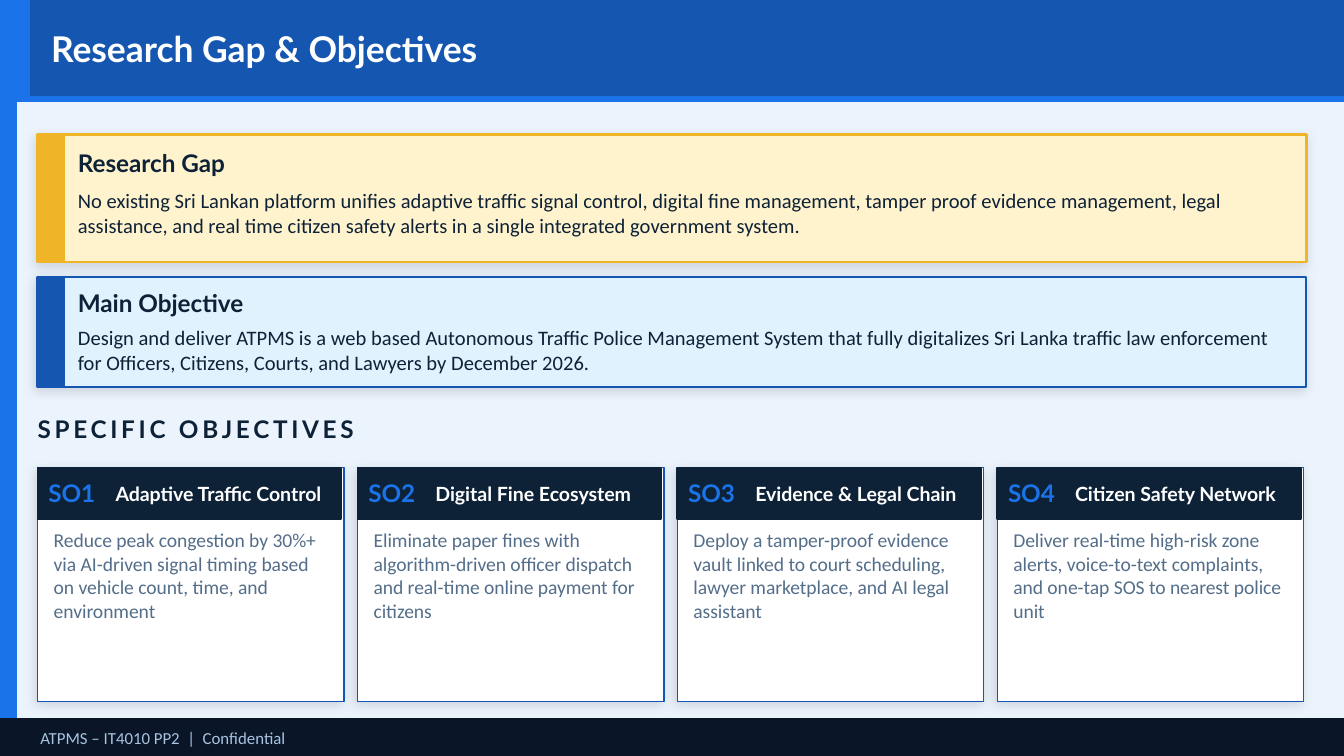
from pptx import Presentation
from pptx.dml.color import RGBColor
from pptx.enum.shapes import MSO_SHAPE
from pptx.enum.text import MSO_ANCHOR
from pptx.oxml import parse_xml
from pptx.oxml.ns import nsdecls, qn
from pptx.util import Inches, Pt

RECTANGLE = MSO_SHAPE.RECTANGLE
TOP, MIDDLE = MSO_ANCHOR.TOP, MSO_ANCHOR.MIDDLE

SKY = RGBColor(0xEB, 0xF3, 0xFD)
BRIGHT_BLUE = RGBColor(0x1A, 0x73, 0xE8)
BLUE = RGBColor(0x15, 0x57, 0xB0)
PALE_BLUE = RGBColor(0xE0, 0xF2, 0xFE)
NAVY = RGBColor(0x0D, 0x21, 0x37)
MIDNIGHT = RGBColor(0x0A, 0x16, 0x28)
AMBER = RGBColor(0xF0, 0xB4, 0x29)
CREAM = RGBColor(0xFF, 0xF3, 0xCD)
SLATE = RGBColor(0x54, 0x6E, 0x8A)
MIST = RGBColor(0xA8, 0xC4, 0xE0)
WHITE = RGBColor(0xFF, 0xFF, 0xFF)

HEADING_FONT, BODY_FONT = "Lato", "Calibri"
WIDTH = 10
HEIGHT = WIDTH * 9 / 16
MARGIN = 0.28

TITLE = "Research Gap & Objectives"
SECTION = "SPECIFIC OBJECTIVES"
FOOTER = "ATPMS – IT4010 PP2  |  Confidential"

PANELS = [
    dict(heading="Research Gap",
         body="No existing Sri Lankan platform unifies adaptive traffic signal control, "
              "digital fine management, tamper proof evidence management, legal assistance, "
              "and real time citizen safety alerts in a single integrated government system.",
         top=1, height=0.95, heading_height=0.38, body_offset=0.4, body_height=0.48,
         fill=CREAM, accent=AMBER, weight=1.5),
    dict(heading="Main Objective",
         body="Design and deliver ATPMS is a web based Autonomous Traffic Police Management "
              "System that fully digitalizes Sri Lanka traffic law enforcement for Officers, "
              "Citizens, Courts, and Lawyers by December 2026.",
         top=2.06, height=0.82, heading_height=0.35, body_offset=0.36, body_height=0.4,
         fill=PALE_BLUE, accent=BLUE, weight=1.2),
]

OBJECTIVES = [
    ("Adaptive Traffic Control",
     "Reduce peak congestion by 30%+ via AI-driven signal timing based on vehicle count, "
     "time, and environment"),
    ("Digital Fine Ecosystem",
     "Eliminate paper fines with algorithm-driven officer dispatch and real-time online "
     "payment for citizens"),
    ("Evidence & Legal Chain",
     "Deploy a tamper-proof evidence vault linked to court scheduling, lawyer marketplace, "
     "and AI legal assistant"),
    ("Citizen Safety Network",
     "Deliver real-time high-risk zone alerts, voice-to-text complaints, and one-tap SOS to "
     "nearest police unit"),
]

deck = Presentation()
deck.slide_width, deck.slide_height = Inches(WIDTH), Inches(HEIGHT)
page = deck.slides.add_slide(deck.slide_layouts[6])
page.background.fill.solid()
page.background.fill.fore_color.rgb = SKY


def add_block(left, top, width, height, fill, line=None, weight=1, shadow=False):
    block = page.shapes.add_shape(
        RECTANGLE, Inches(left), Inches(top), Inches(width), Inches(height))
    block.shadow.inherit = False
    block.fill.solid()
    block.fill.fore_color.rgb = fill
    block.line.color.rgb = line or fill
    block.line.width = Pt(weight)
    if shadow:
        effects = block._element.spPr.find(qn("a:effectLst"))
        effects.append(parse_xml(
            f'<a:outerShdw {nsdecls("a")} blurRad="{Pt(6)}" dist="{Pt(2)}" '
            f'dir="{135 * 60000}" algn="bl" rotWithShape="0">'
            '<a:srgbClr val="000000"><a:alpha val="12000"/></a:srgbClr></a:outerShdw>'))


def add_text(left, top, width, height, text, size, color,
             heading=True, anchor=MIDDLE, spacing=None):
    box = page.shapes.add_textbox(
        Inches(left), Inches(top), Inches(width), Inches(height))
    frame = box.text_frame
    frame.word_wrap = True
    frame.vertical_anchor = anchor
    frame.margin_left = frame.margin_right = frame.margin_top = frame.margin_bottom = 0
    span = frame.paragraphs[0].add_run()
    span.text = text
    span.font.name = HEADING_FONT if heading else BODY_FONT
    span.font.size = Pt(size)
    span.font.bold = heading
    span.font.color.rgb = color
    if spacing:
        span.font._element.set("spc", str(spacing * 100))


def add_panel(panel):
    top, height, accent = panel["top"], panel["height"], panel["accent"]
    text_left = MARGIN + 0.3
    add_block(MARGIN, top, WIDTH - 2 * MARGIN, height, panel["fill"],
              accent, panel["weight"], shadow=True)
    add_block(MARGIN, top, 0.2, height, accent)
    add_text(text_left, top + 0.02, 2.5, panel["heading_height"],
             panel["heading"], 13, NAVY)
    add_text(text_left, top + panel["body_offset"], 9, panel["body_height"],
             panel["body"], 11, NAVY, heading=False, anchor=TOP)


def add_card(index, heading, body):
    width, gap, top, header = 2.28, 0.1, 3.48, 0.38
    left = MARGIN + index * (width + gap)
    add_block(left, top, width, 1.74, WHITE, BLUE, 0.75, shadow=True)
    add_block(left, top, width - 0.02, header, NAVY)
    add_text(left + 0.08, top, 0.55, header, f"SO{index + 1}", 13, BRIGHT_BLUE)
    add_text(left + 0.58, top, 1.6, header, heading, 10.5, WHITE)
    add_text(left + 0.12, top + 0.45, width - 0.24, 1.35, body, 10.5, SLATE,
             heading=False, anchor=TOP)


add_block(0, 0, 0.12, HEIGHT, BRIGHT_BLUE)
add_block(0, 0, WIDTH, 0.72, BLUE)
add_block(0, 0, 0.22, 0.72, BRIGHT_BLUE)
add_text(0.38, 0, 9.3, 0.72, TITLE, 19, WHITE)
add_block(0, 0.72, WIDTH, 0.03, BRIGHT_BLUE)

for panel in PANELS:
    add_panel(panel)

add_text(MARGIN, 3, WIDTH - 2 * MARGIN, 0.38, SECTION, 13, NAVY, spacing=2)
for index, (heading, body) in enumerate(OBJECTIVES):
    add_card(index, heading, body)

add_block(0, 5.35, WIDTH, 0.28, MIDNIGHT)
add_text(0.3, 5.35, 9.4, 0.28, FOOTER, 9, MIST, heading=False)

deck.save("out.pptx")
